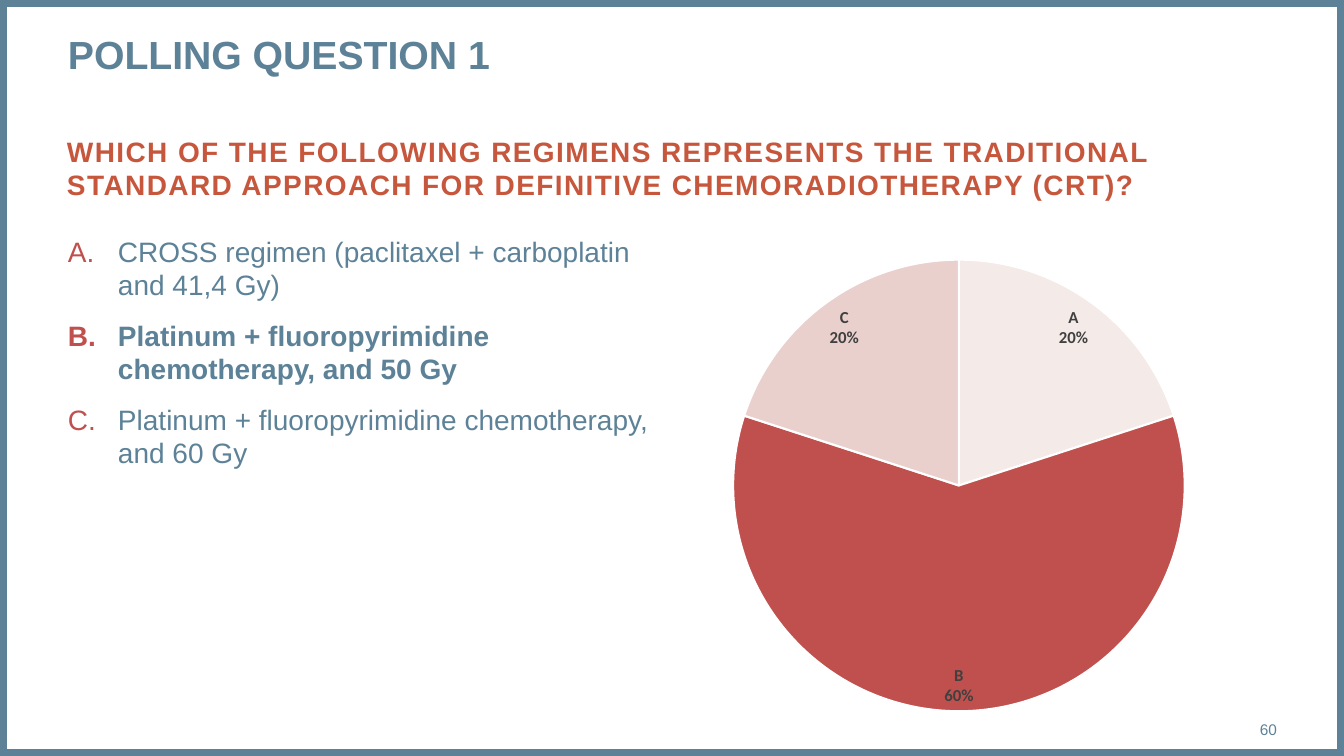
from lxml import etree
from pptx import Presentation
from pptx.chart.data import CategoryChartData
from pptx.dml.color import RGBColor
from pptx.enum.chart import XL_CHART_TYPE, XL_LABEL_POSITION
from pptx.enum.shapes import MSO_SHAPE
from pptx.enum.text import MSO_ANCHOR, PP_ALIGN
from pptx.oxml import parse_xml
from pptx.oxml.ns import nsdecls, qn
from pptx.util import Emu, Pt

PIE, INSIDE_END = XL_CHART_TYPE.PIE, XL_LABEL_POSITION.INSIDE_END
TOP, MIDDLE = MSO_ANCHOR.TOP, MSO_ANCHOR.MIDDLE
LEFT, RIGHT = PP_ALIGN.LEFT, PP_ALIGN.RIGHT

TITLE = "POLLING QUESTION 1"
QUESTION = ("WHICH OF THE FOLLOWING REGIMENS REPRESENTS THE TRADITIONAL "
            "STANDARD APPROACH FOR DEFINITIVE CHEMORADIOTHERAPY (CRT)?")
CORRECT = "B"
ANSWERS = [  # letter, wording, share of votes, slice colour
    ("A", "CROSS regimen (paclitaxel + carboplatin and 41,4 Gy)", 20, "pale"),
    ("B", "Platinum + fluoropyrimidine chemotherapy, and 50 Gy", 60, "red"),
    ("C", "Platinum + fluoropyrimidine chemotherapy, and 60 Gy", 20, "pink"),
]
PAGE = "60"

COLORS = {"blue": "5D8298", "orange": "C7573C", "red": "C0504D", "pale": "F4EAE7",
          "pink": "E9D0CD", "grey": "404040", "white": "FFFFFF"}
PX = 9071  # EMU per px
SLIDE = (1344, 756)
TITLE_BOX = (68, 28, 1209, 95)
QUESTION_BOX = (67, 134, 1210, 78)
ANSWER_BOX = (68, 234, 612, 422)
PAGE_BOX = (1190, 709, 87, 40)
CHART_BOX = (640, 245, 638, 481)
PIE_SIZE = 452
INDENT = 50


def px(n):
    return Emu(round(n * PX))


def rgb(name):
    return RGBColor.from_string(COLORS[name])


def style(font, color, **values):
    for key, value in values.items():
        setattr(font, key, value)
    font.color.rgb = rgb(color)


def place(shp, box):
    shp.left, shp.top, shp.width, shp.height = map(px, box)


def prepare(shp, box, anchor=TOP):
    """Place a text shape, clear its insets and return its text frame."""
    place(shp, box)
    tf = shp.text_frame
    tf.word_wrap, tf.vertical_anchor = True, anchor
    for side in ("left", "top", "right", "bottom"):
        setattr(tf, f"margin_{side}", 0)
    return tf


def write(p, text, color, size, bold=False, leading=None, align=LEFT):
    p.alignment = align
    if leading:
        p.line_spacing = Pt(leading)
    r = p.add_run()
    r.text = text
    style(r.font, color, name="Arial", size=Pt(size), bold=bold)
    return r


def add_letter(p):
    """Number a paragraph A., B., C. with a hanging indent."""
    pPr = p._p.get_or_add_pPr()
    pPr.set("marL", str(px(INDENT)))
    pPr.set("indent", str(-px(INDENT)))
    color = etree.SubElement(pPr, qn("a:buClr"))
    etree.SubElement(color, qn("a:srgbClr"), val=COLORS["red"])
    etree.SubElement(pPr, qn("a:buFont"), typeface="Arial")
    etree.SubElement(pPr, qn("a:buAutoNum"), type="alphaUcPeriod")


def add_pie(s):
    data = CategoryChartData()
    data.categories = [a[0] for a in ANSWERS]
    data.add_series("Series 1", [a[2] for a in ANSWERS])
    chart = s.shapes.add_chart(PIE, *map(px, CHART_BOX), data).chart
    chart.has_legend = chart.has_title = False
    style(chart.font, "grey", name="Calibri", size=Pt(10))
    plot = chart.plots[0]
    plot.vary_by_categories = True
    for i, answer in enumerate(ANSWERS):
        fmt = plot.series[0].points[i].format
        fmt.fill.solid()
        fmt.fill.fore_color.rgb = rgb(answer[3])
        fmt.line.color.rgb = rgb("white")
        fmt.line.width = Pt(1.5)
    plot.has_data_labels = True
    labels = plot.data_labels
    labels.show_value = False
    labels.show_percentage = labels.show_category_name = True
    labels.position = INSIDE_END
    style(labels.font, "grey", name="Calibri", size=Pt(12), bold=True)
    separator = etree.Element(qn("c:separator"))
    separator.text = "\n"
    labels._element.find(qn("c:showBubbleSize")).addnext(separator)

    w, h = (round(PIE_SIZE / side, 3) for side in CHART_BOX[2:])
    values = {"x": (1 - w) / 2, "y": (1 - h) / 2, "w": w, "h": h}
    parts = '<c:layoutTarget val="inner"/><c:xMode val="edge"/><c:yMode val="edge"/>'
    parts += "".join(f'<c:{k} val="{v:.4f}"/>' for k, v in values.items())
    layout = parse_xml(f'<c:layout {nsdecls("c")}><c:manualLayout>{parts}'
                       '</c:manualLayout></c:layout>')
    area = chart._chartSpace.chart.plotArea
    for old in area.findall(qn("c:layout")):
        area.remove(old)
    area.insert(0, layout)


def main():
    prs = Presentation()
    prs.slide_width, prs.slide_height = map(px, SLIDE)
    s = prs.slides.add_slide(prs.slide_layouts[5])

    frame = s.shapes.add_shape(MSO_SHAPE.RECTANGLE, 0, 0, *map(px, SLIDE))
    frame.shadow.inherit = False
    frame.fill.background()
    frame.line.color.rgb = rgb("blue")
    frame.line.width = Pt(10)

    tf = prepare(s.shapes.title, TITLE_BOX)
    write(tf.paragraphs[0], TITLE, "blue", 28, bold=True, leading=35)

    tf = prepare(s.shapes.add_textbox(0, 0, 0, 0), QUESTION_BOX)
    r = write(tf.paragraphs[0], QUESTION, "orange", 20, bold=True, leading=24)
    r._r.get_or_add_rPr().set("spc", "100")

    tf = prepare(s.shapes.add_textbox(0, 0, 0, 0), ANSWER_BOX)
    for i, (letter, text, _, _) in enumerate(ANSWERS):
        p = tf.add_paragraph() if i else tf.paragraphs[0]
        add_letter(p)
        write(p, text, "blue", 20, bold=letter == CORRECT, leading=24)
        if i:
            p.space_before = Pt(12)

    tf = prepare(s.shapes.add_textbox(0, 0, 0, 0), PAGE_BOX, MIDDLE)
    write(tf.paragraphs[0], PAGE, "blue", 11, align=RIGHT)

    add_pie(s)
    prs.save("out.pptx")


if __name__ == "__main__":
    main()
